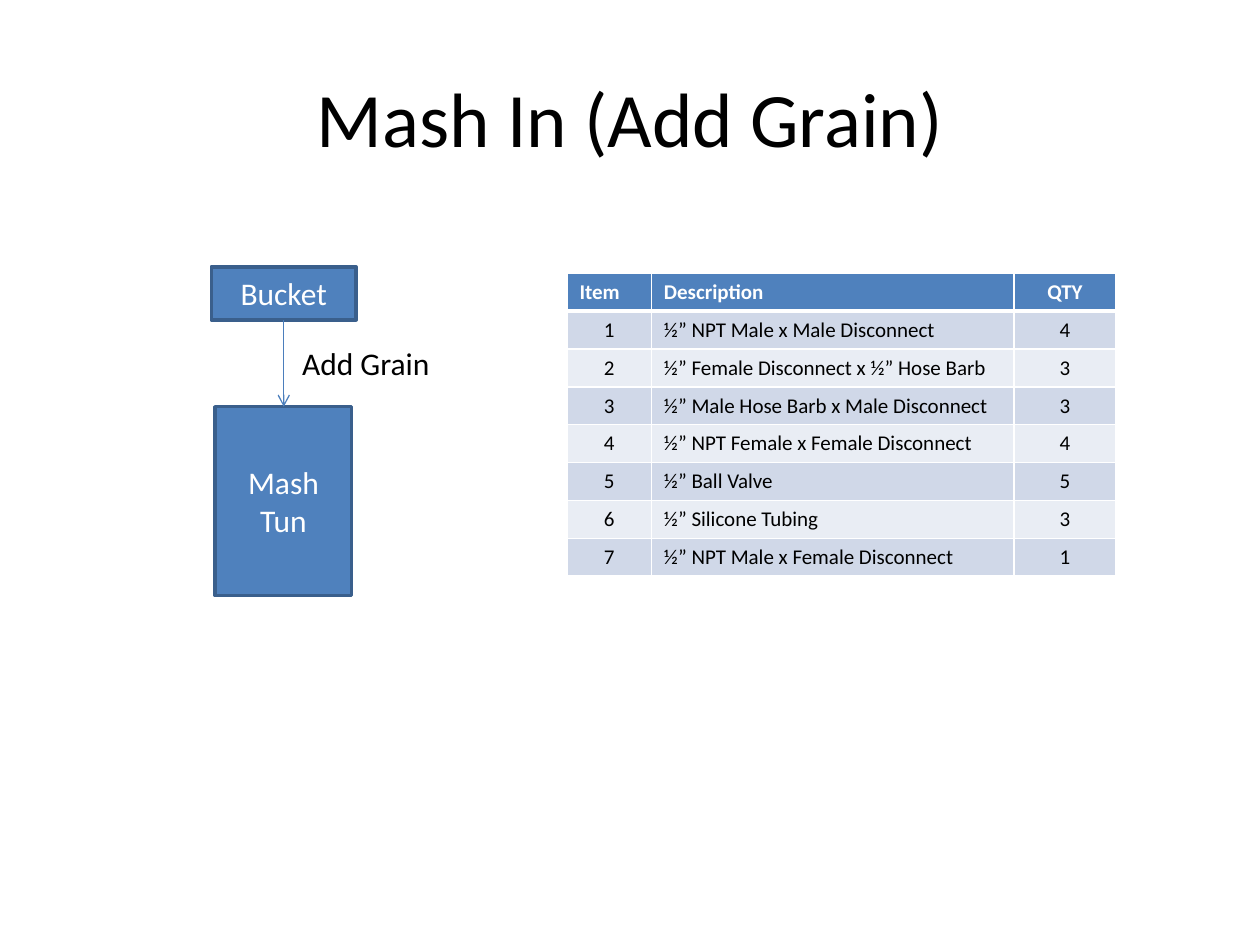
from dataclasses import dataclass

import pptx
import pptx.dml.color
import pptx.enum.shapes
import pptx.enum.text
import pptx.oxml.ns
import pptx.util
from lxml import etree

Cm = pptx.util.Cm
Pt = pptx.util.Pt
ALIGN = pptx.enum.text.PP_ALIGN
ANCHOR = pptx.enum.text.MSO_ANCHOR


@dataclass(frozen=True)
class Theme:
    font: str = "Calibri"
    title: int = 44
    body: int = 18
    cell: int = 12
    black: str = "000000"
    white: str = "FFFFFF"
    blue: str = "4F81BD"
    outline: str = "3A5F8C"
    arrow: str = "4B7EBC"
    bands: tuple = ("D0D8E8", "E9EDF4")


THEME = Theme()

HEADER = ("Item", "Description", "QTY")
PARTS = [
    ("½” NPT Male x Male Disconnect", 4),
    ("½” Female Disconnect x ½” Hose Barb", 3),
    ("½” Male Hose Barb x Male Disconnect", 3),
    ("½” NPT Female x Female Disconnect", 4),
    ("½” Ball Valve", 5),
    ("½” Silicone Tubing", 3),
    ("½” NPT Male x Female Disconnect", 1),
]
COLUMN_WIDTHS = (1.7, 7.31, 2.06)
ROW_HEIGHT = 0.76


def rgb(value):
    return pptx.dml.color.RGBColor.from_string(value)


def add_xml(parent, tag, **attributes):
    return etree.SubElement(parent, pptx.oxml.ns.qn(tag), attributes)


def set_text(tf, text, size, color, align=ALIGN.LEFT, bold=False):
    p = tf.paragraphs[0]
    p.text = text
    p.alignment = align
    p.font.name = THEME.font
    p.font.size = Pt(size)
    p.font.bold = bold
    p.font.color.rgb = rgb(color)


def add_label(s, text, left, top, width, height, size, align=ALIGN.LEFT, anchor=ANCHOR.TOP):
    tf = s.shapes.add_textbox(Cm(left), Cm(top), Cm(width), Cm(height)).text_frame
    tf.word_wrap = True
    tf.vertical_anchor = anchor
    set_text(tf, text, size, THEME.black, align)


def add_vessel(s, text, left, top, width, height):
    sp = s.shapes.add_shape(
        pptx.enum.shapes.MSO_SHAPE.RECTANGLE, Cm(left), Cm(top), Cm(width), Cm(height))
    sp.shadow.inherit = False
    sp.fill.solid()
    sp.fill.fore_color.rgb = rgb(THEME.blue)
    sp.line.color.rgb = rgb(THEME.outline)
    sp.line.width = Pt(2)
    sp.text_frame.word_wrap = True
    sp.text_frame.vertical_anchor = ANCHOR.MIDDLE
    set_text(sp.text_frame, text, THEME.body, THEME.white, ALIGN.CENTER)
    return sp


def add_flow(s, source, target):
    x = source.left + source.width // 2
    line = s.shapes.add_connector(
        pptx.enum.shapes.MSO_CONNECTOR.STRAIGHT, x, source.top + source.height, x, target.top)
    line.line.color.rgb = rgb(THEME.arrow)
    line.line.width = Pt(0.75)
    add_xml(line.line._get_or_add_ln(), "a:tailEnd", type="arrow")
    add_xml(line._element.spPr, "a:effectLst")


def set_borders(cell, bottom):
    tc_pr = cell._tc.get_or_add_tcPr()
    for side, width in (("L", 1), ("R", 1), ("T", 1), ("B", bottom)):
        ln = add_xml(tc_pr, f"a:ln{side}", w=str(Pt(width)))
        add_xml(add_xml(ln, "a:solidFill"), "a:srgbClr", val=THEME.white)


def fill_cell(cell, text, fill, color, align, bold=False):
    set_borders(cell, 3 if bold else 1)
    cell.fill.solid()
    cell.fill.fore_color.rgb = rgb(fill)
    set_text(cell.text_frame, text, THEME.cell, color, align, bold)


def add_parts_table(s, left, top):
    rows = len(PARTS) + 1
    table = s.shapes.add_table(
        rows, len(HEADER), Cm(left), Cm(top),
        Cm(sum(COLUMN_WIDTHS)), Cm(rows * ROW_HEIGHT)).table
    for column, width in zip(table.columns, COLUMN_WIDTHS):
        column.width = Cm(width)
    for row in table.rows:
        row.height = Cm(ROW_HEIGHT)
    header_aligns = (ALIGN.LEFT, ALIGN.LEFT, ALIGN.CENTER)
    for c, (text, align) in enumerate(zip(HEADER, header_aligns)):
        fill_cell(table.cell(0, c), text, THEME.blue, THEME.white, align, bold=True)
    body_aligns = (ALIGN.CENTER, ALIGN.LEFT, ALIGN.CENTER)
    for item, (description, quantity) in enumerate(PARTS, start=1):
        band = THEME.bands[(item - 1) % 2]
        values = (str(item), description, str(quantity))
        for c, (text, align) in enumerate(zip(values, body_aligns)):
            fill_cell(table.cell(item, c), text, band, THEME.black, align)


def main():
    prs = pptx.Presentation()
    prs.slide_width = Cm(25.4)
    prs.slide_height = Cm(19.05)
    s = prs.slides.add_slide(prs.slide_layouts[6])
    add_label(s, "Mash In (Add Grain)", 1.27, 0.76, 22.86, 3.18,
              THEME.title, ALIGN.CENTER, ANCHOR.MIDDLE)
    mash_tun = add_vessel(s, "Mash Tun", 4.34, 8.2, 2.75, 3.81)
    add_label(s, "Add Grain", 5.84, 6.81, 3.38, 1.02, THEME.body)
    bucket = add_vessel(s, "Bucket", 4.26, 5.38, 2.92, 1.07)
    add_flow(s, bucket, mash_tun)
    add_parts_table(s, 11.43, 5.51)
    prs.save("out.pptx")


if __name__ == "__main__":
    main()
